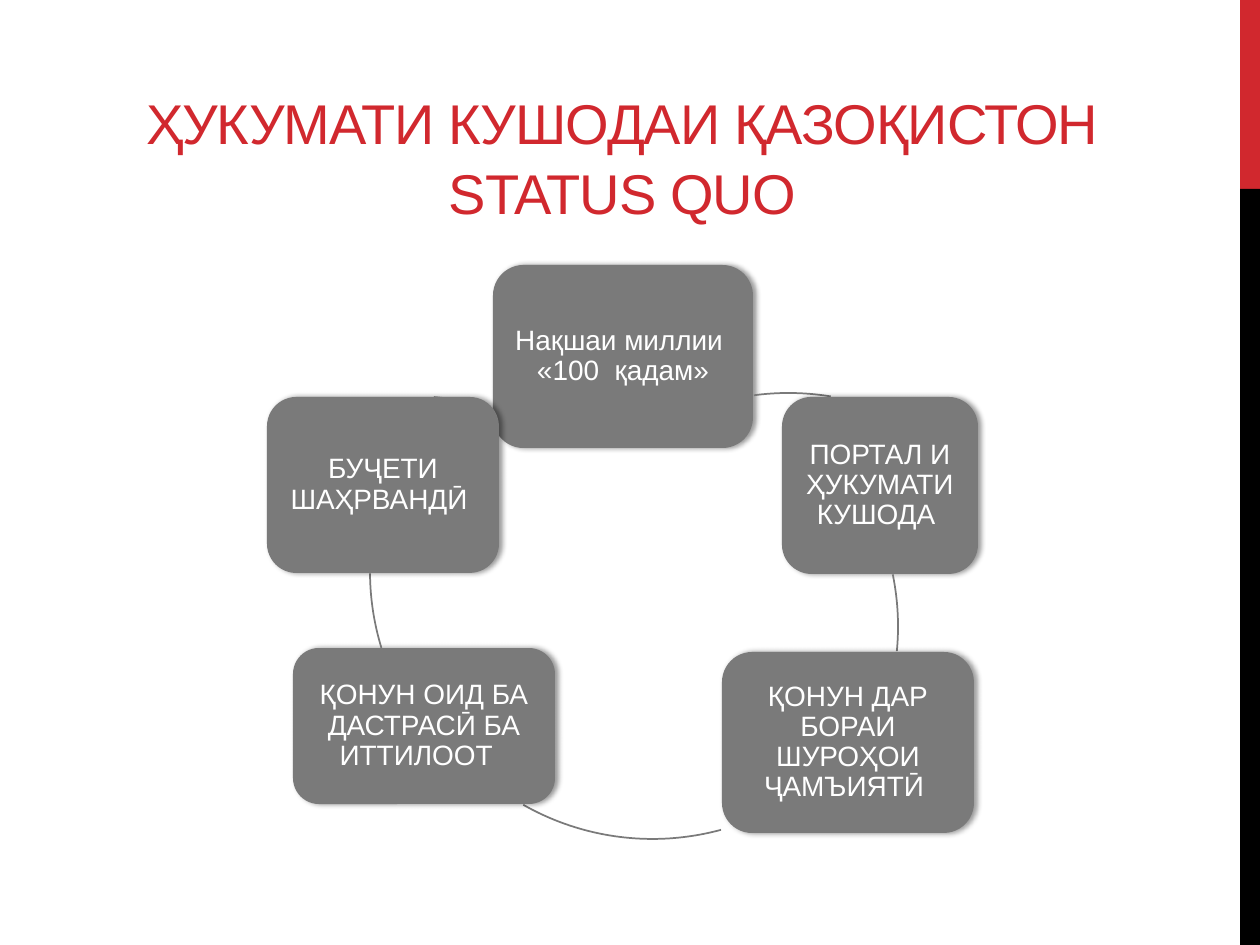
from lxml import etree
from pptx import Presentation
from pptx.dml.color import RGBColor
from pptx.enum.shapes import MSO_SHAPE
from pptx.enum.text import MSO_ANCHOR, PP_ALIGN
from pptx.oxml import parse_xml
from pptx.util import Emu, Pt

RECTANGLE, ROUNDED, ARC = MSO_SHAPE.RECTANGLE, MSO_SHAPE.ROUNDED_RECTANGLE, MSO_SHAPE.ARC
MIDDLE, BOTTOM, CENTER = MSO_ANCHOR.MIDDLE, MSO_ANCHOR.BOTTOM, PP_ALIGN.CENTER
EMU_PER_PX = 914400 / 126
DRAWING = "http://schemas.openxmlformats.org/drawingml/2006/main"
SHADOW = (
    f'<a:outerShdw xmlns:a="{DRAWING}" blurRad="39370" dist="22860" dir="0" '
    'rotWithShape="0"><a:srgbClr val="000000"><a:alpha val="40000"/>'
    '</a:srgbClr></a:outerShdw>'
)
RED, BLACK, GRAY, WHITE = "D1282E", "000000", "7A7A7A", "FFFFFF"
CIRCLE = 523

CYCLE = [
    ("Нақшаи миллии  «100  қадам»", (493, 265, 260, 183), (527, 393), (262.4, 279.3)),
    ("ПОРТАЛ И ҲУКУМАТИ КУШОДА ", (782, 397, 196, 177), (375, 365), (348.5, 5.4)),
    ("ҚОНУН ДАР БОРАИ ШУРОҲОИ ҶАМЪИЯТӢ ", (722, 652, 252, 181), (391, 316), (74.8, 119.6)),
    ("ҚОНУН ОИД БА ДАСТРАСӢ БА ИТТИЛООТ  ", (293, 648, 262, 156), (370, 310), (163, 179.6)),
    ("БУҶЕТИ ШАҲРВАНДӢ ", (267, 397, 232, 176), (149, 396), (275.1, 288.4)),
]


def px(length):
    """Turn pixels into EMU."""
    return Emu(round(length * EMU_PER_PX))


def color(code):
    """Turn a hex string into a colour."""
    return RGBColor.from_string(code)


class SlideBuilder:
    """Holds the style and the current slide."""

    def __init__(self, page, font="Arial"):
        """Keep the page and its font."""
        self.page = page
        self.font = font

    def shape(self, kind, bounds, fill):
        """Add a filled shape with no outline or shadow."""
        shape = self.page.shapes.add_shape(kind, *map(px, bounds))
        shape.shadow.inherit = False
        shape.fill.solid()
        shape.fill.fore_color.rgb = color(fill)
        shape.line.fill.background()
        return shape

    def label(self, box, text, size, ink, anchor, spacing):
        """Set one centred paragraph in a box."""
        frame = box.text_frame
        frame.word_wrap = True
        frame.vertical_anchor = anchor
        para = frame.paragraphs[0]
        para.text = text
        para.alignment = CENTER
        para.line_spacing = spacing
        para.font.name = self.font
        para.font.size = Pt(size)
        para.font.color.rgb = color(ink)
        return para

    def title(self, text, bounds):
        """Add the title with tightened letters."""
        box = self.page.shapes.add_textbox(*map(px, bounds))
        para = self.label(box, text, 32, RED, BOTTOM, 1.04)
        for span in para.runs:
            span._r.get_or_add_rPr().set("spc", "-60")

    def card(self, text, bounds):
        """Add a rounded card with a soft shadow."""
        card = self.shape(ROUNDED, bounds, GRAY)
        effects = card._element.spPr.find(etree.QName(DRAWING, "effectLst").text)
        effects.append(parse_xml(SHADOW))
        frame = card.text_frame
        frame.margin_left = frame.margin_right = px(9)
        frame.margin_top = frame.margin_bottom = px(9)
        self.label(card, text, 16, WHITE, MIDDLE, 0.9)

    def arc(self, corner, angles):
        """Add a piece of the cycle's circle between two angles."""
        arc = self.shape(ARC, (*corner, CIRCLE, CIRCLE), WHITE)
        arc.fill.background()
        arc.line.color.rgb = color(GRAY)
        arc.line.width = Pt(1)
        for index, degrees in enumerate(angles):
            arc.adjustments[index] = degrees * 0.6


def main():
    """Build the slide and save it."""
    deck = Presentation()
    deck.slide_width, deck.slide_height = px(1260), px(945)
    builder = SlideBuilder(deck.slides.add_slide(deck.slide_layouts[6]))
    builder.shape(RECTANGLE, (1240, 0, 20, 189), RED)
    builder.shape(RECTANGLE, (1240, 189, 20, 756), BLACK)
    builder.title("ҲУКУМАТИ КУШОДАИ ҚАЗОҚИСТОН \vSTATUS QUO ", (73, 21, 1113, 211))
    for text, bounds, corner, angles in CYCLE:
        builder.card(text, bounds)
        builder.arc(corner, angles)
    deck.save("out.pptx")


if __name__ == "__main__":
    main()
